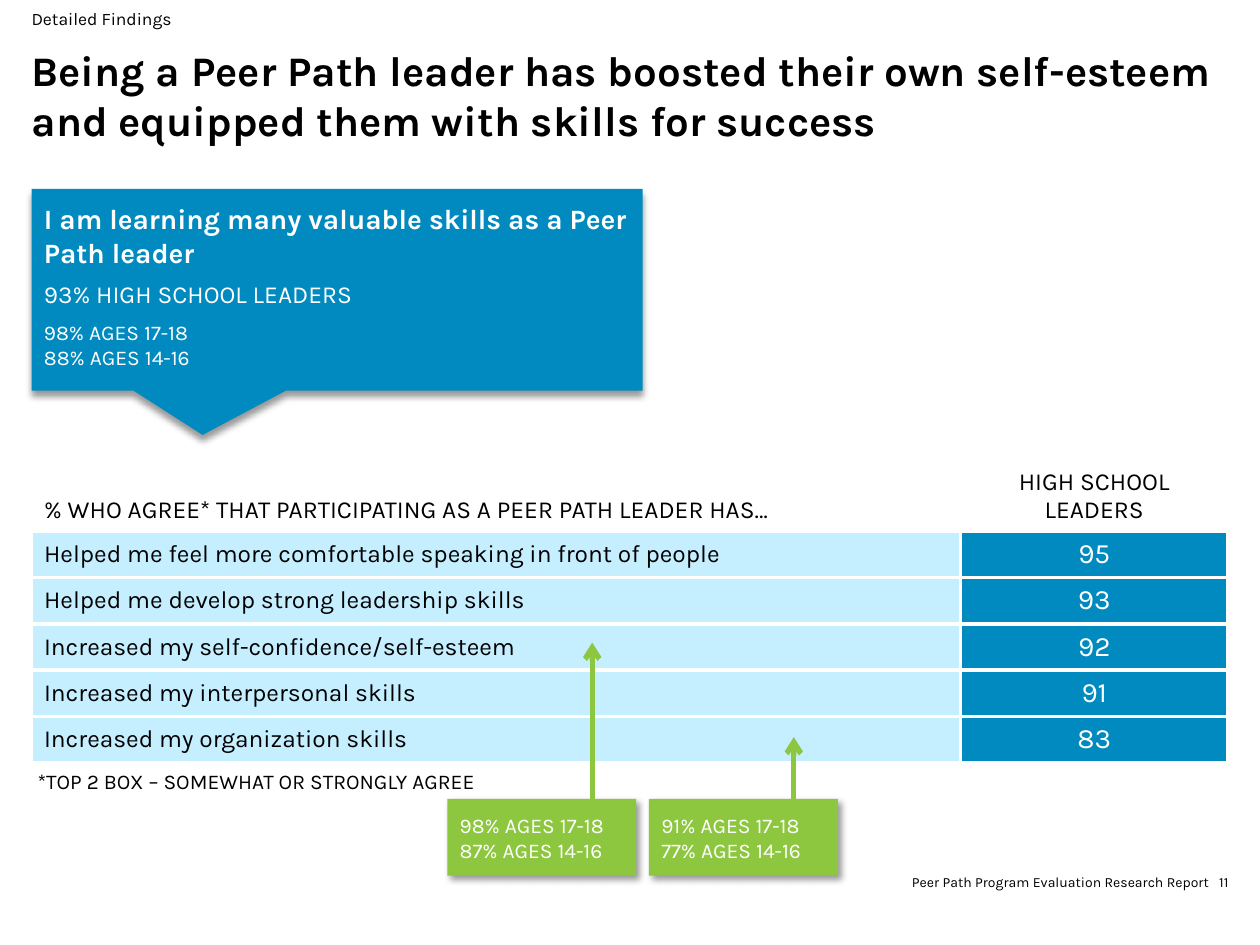
from dataclasses import dataclass
from typing import NamedTuple

from lxml.etree import SubElement
from pptx import Presentation
from pptx.dml.color import RGBColor
from pptx.enum.shapes import MSO_CONNECTOR as Line, MSO_SHAPE as Preset
from pptx.enum.text import MSO_ANCHOR as Anchor, PP_ALIGN as Align
from pptx.oxml import parse_xml
from pptx.oxml.ns import nsdecls, qn
from pptx.util import Inches, Pt

UNIT = Inches(0.05)
COLUMNS, ROWS = 200, 150


@dataclass(frozen=True)
class Theme:
    font: str = "Karla"
    black: str = "000000"
    white: str = "FFFFFF"
    blue: str = "008ABF"
    pale: str = "C5EEFF"
    green: str = "8DC63F"
    title: float = 24
    large: float = 16
    body: float = 14
    note: float = 12
    section: float = 10
    footer: float = 8
    rule: float = 2.25
    arrow: float = 3


class Box(NamedTuple):
    col: float
    row: float
    cols: float
    rows: float


class Para(NamedTuple):
    text: str
    size: float
    bold: bool = False
    before: float = 0


class Finding(NamedTuple):
    statement: str
    percent: str


class AgeSplit(NamedTuple):
    col: float
    older: str
    younger: str
    arrow_from: float
    arrow_to: float


THEME = Theme()
FINDINGS = [
    Finding("Helped me feel more comfortable speaking in front of people", "95"),
    Finding("Helped me develop strong leadership skills", "93"),
    Finding("Increased my self-confidence/self-esteem", "92"),
    Finding("Increased my interpersonal skills", "91"),
    Finding("Increased my organization skills", "83"),
]
AGE_SPLITS = [
    AgeSplit(71, "98% AGES 17-18", "87% AGES 14-16", 129, 102),
    AgeSplit(103, "91% AGES 17-18", "77% AGES 14-16", 127, 117),
]
CALLOUT = [
    Para("I am learning many valuable skills as a Peer Path leader", THEME.large, True),
    Para("93% HIGH SCHOOL LEADERS", THEME.body, before=6),
    Para("98% AGES 17-18", THEME.note, before=6),
    Para("88% AGES 14-16", THEME.note),
]


def grid(*units: float) -> list[int]:
    return [round(unit * UNIT) for unit in units]


def write(frame, paras: list[Para], *, color: str = THEME.black,
          align=Align.LEFT, anchor=Anchor.TOP, margins=None) -> None:
    frame.word_wrap = True
    frame.vertical_anchor = anchor
    if margins is not None:
        side, end = grid(*margins)
        frame.margin_left = frame.margin_right = side
        frame.margin_top = frame.margin_bottom = end
    for index, para in enumerate(paras):
        line = frame.add_paragraph() if index else frame.paragraphs[0]
        line.alignment = align
        line.space_before = Pt(para.before)
        run = line.add_run()
        run.text = para.text
        run.font.name = THEME.font
        run.font.size = Pt(para.size)
        run.font.bold = para.bold
        run.font.color.rgb = RGBColor.from_string(color)


def add_label(slide, box: Box, para: Para, *, align=Align.LEFT,
              anchor=Anchor.TOP, margins=(0, 0)) -> None:
    label = slide.shapes.add_textbox(*grid(*box))
    write(label.text_frame, [para], align=align, anchor=anchor, margins=margins)


def add_panel(slide, preset, box: Box, fill: str, paras: list[Para], *,
              angle: int, anchor=Anchor.TOP):
    panel = slide.shapes.add_shape(preset, *grid(*box))
    panel.fill.solid()
    panel.fill.fore_color.rgb = RGBColor.from_string(fill)
    panel.line.fill.background()
    panel.shadow.inherit = False
    effects = panel._element.spPr.find(qn("a:effectLst"))
    effects.append(parse_xml(
        f'<a:outerShdw {nsdecls("a")} blurRad="{Pt(4)}" dist="{Pt(3)}" '
        f'dir="{angle * 60000}" algn="tl" rotWithShape="0">'
        f'<a:srgbClr val="{THEME.black}"><a:alpha val="40000"/></a:srgbClr>'
        '</a:outerShdw>'))
    write(panel.text_frame, paras, color=THEME.white, anchor=anchor, margins=(2, 2))
    return panel


def add_arrow(slide, col: float, start: float, end: float) -> None:
    arrow = slide.shapes.add_connector(Line.STRAIGHT, *grid(col, start, col, end))
    arrow.line.color.rgb = RGBColor.from_string(THEME.green)
    arrow.line.width = Pt(THEME.arrow)
    SubElement(arrow.line._get_or_add_ln(), qn("a:tailEnd"), type="arrow")
    SubElement(arrow._element.spPr, qn("a:effectLst"))


def fill_cell(cell, para: Para, fill: str, *, color: str = THEME.black,
              align=Align.LEFT, anchor=Anchor.MIDDLE) -> None:
    write(cell.text_frame, [para], color=color, align=align)
    cell.vertical_anchor = anchor
    cell.fill.solid()
    cell.fill.fore_color.rgb = RGBColor.from_string(fill)
    for index, side in enumerate(("lnL", "lnR", "lnT", "lnB")):
        cell._tc.get_or_add_tcPr().insert(index, parse_xml(
            f'<a:{side} {nsdecls("a")} w="{Pt(THEME.rule)}"><a:solidFill>'
            f'<a:srgbClr val="{THEME.white}"/></a:solidFill></a:{side}>'))


def add_findings(slide) -> None:
    box = Box(5, 73, 190, 48)
    header_rows, finding_rows = 3.4, 3.8
    findings = slide.shapes.add_table(len(FINDINGS) + 1, 2, *grid(*box))
    table = findings.table
    table.first_row = table.horz_banding = False
    for column, width in zip(table.columns, grid(147.5, 42.4)):
        column.width = width
    for index, row in enumerate(table.rows):
        row.height = grid(finding_rows if index else header_rows)[0]
    findings.width, findings.height = grid(box.cols, box.rows)
    headings = [
        ("% WHO AGREE* THAT PARTICIPATING AS A PEER PATH LEADER HAS…", Align.LEFT),
        ("HIGH SCHOOL LEADERS", Align.CENTER),
    ]
    for column, (heading, align) in enumerate(headings):
        fill_cell(table.cell(0, column), Para(heading, THEME.body), THEME.white,
                  align=align, anchor=Anchor.BOTTOM)
    for row, finding in enumerate(FINDINGS, 1):
        fill_cell(table.cell(row, 0), Para(finding.statement, THEME.body), THEME.pale)
        fill_cell(table.cell(row, 1), Para(finding.percent, THEME.large), THEME.blue,
                  color=THEME.white, align=Align.CENTER)


def main() -> None:
    deck = Presentation()
    deck.slide_width, deck.slide_height = grid(COLUMNS, ROWS)
    slide = deck.slides.add_slide(deck.slide_layouts[6])
    add_label(slide, Box(5, 5, 191, 20), Para(
        "Being a Peer Path leader has boosted their own self-esteem "
        "and equipped them with skills for success", THEME.title, True),
        anchor=Anchor.MIDDLE)
    add_findings(slide)
    add_label(slide, Box(5, 1.2, 67, 3.4), Para("Detailed Findings", THEME.section))
    add_label(slide, Box(4, 121, 110, 6),
              Para("*TOP 2 BOX – SOMEWHAT OR STRONGLY AGREE", THEME.note), margins=(2, 1))
    callout = add_panel(slide, Preset.RECTANGULAR_CALLOUT, Box(5, 30, 97, 32),
                        THEME.blue, CALLOUT, angle=90)
    callout.adjustments[0], callout.adjustments[1] = -0.22, 0.72
    for split in AGE_SPLITS:
        ages = [Para(split.older, THEME.note), Para(split.younger, THEME.note)]
        add_panel(slide, Preset.RECTANGLE, Box(split.col, 126.8, 30, 12.2),
                  THEME.green, ages, angle=45, anchor=Anchor.MIDDLE)
        add_arrow(slide, split.col + 23, split.arrow_from, split.arrow_to)
    for box, text in [
        (Box(189.8, 135, 5.2, 10), "11"),
        (Box(128.6, 135, 63.4, 10), "Peer Path Program Evaluation Research Report"),
    ]:
        add_label(slide, box, Para(text, THEME.footer),
                  align=Align.RIGHT, anchor=Anchor.MIDDLE)
    deck.save("out.pptx")


if __name__ == "__main__":
    main()
